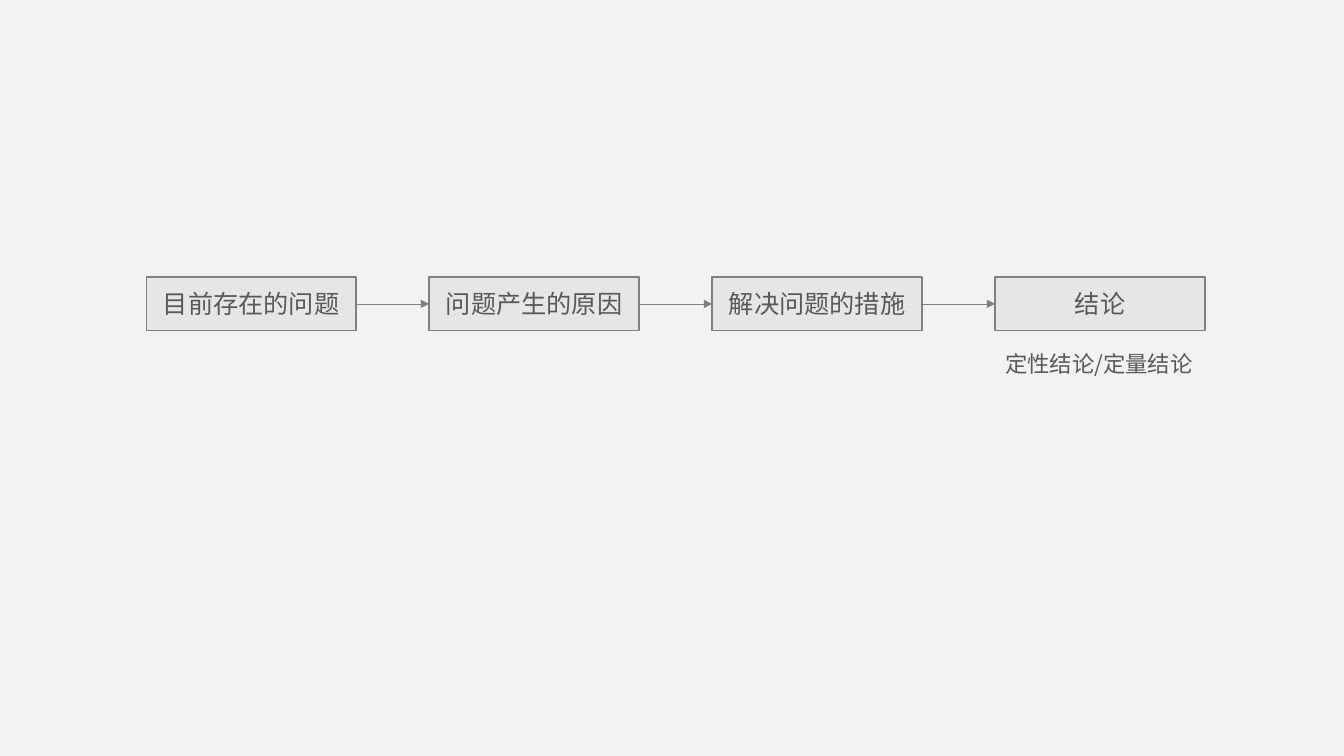
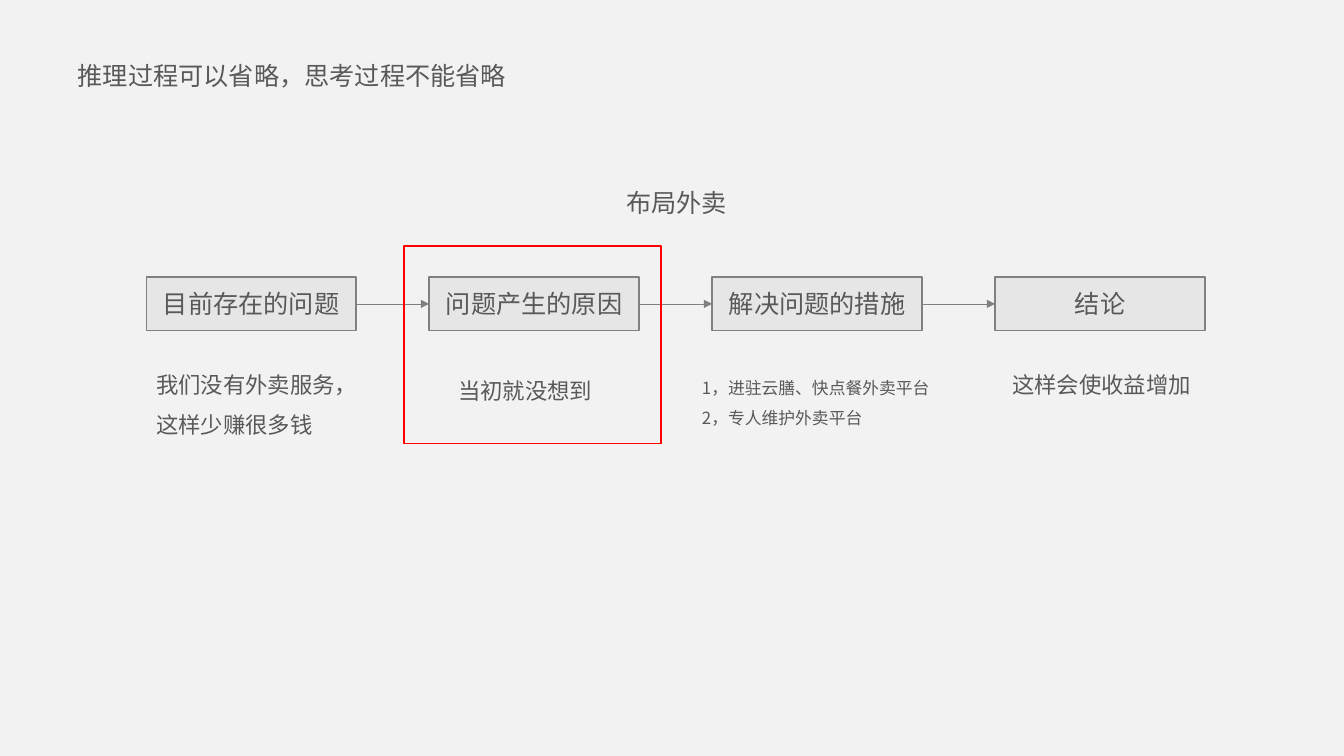
from lxml import etree
from pptx import Presentation
from pptx import util as u
from pptx.dml.color import RGBColor
from pptx.enum import shapes, text
from pptx.oxml import ns

FONT = "Noto Sans CJK SC"
PAPER = RGBColor(0xF2, 0xF2, 0xF2)
BOX_FILL = RGBColor(0xE7, 0xE6, 0xE6)
OUTLINE = RGBColor(0x80, 0x80, 0x80)
INK = RGBColor(0x59, 0x59, 0x59)
RED = RGBColor(0xFF, 0x00, 0x00)

STEPS = ["目前存在的问题", "问题产生的原因", "解决问题的措施", "结论"]
BOX_WIDTH, BOX_HEIGHT = u.Inches(2.08), u.Inches(0.53)
ROW_TOP = u.Inches(2.75)
FIRST, LAST = u.Inches(1.45), u.Inches(9.87)
COLUMNS = [FIRST + (LAST - FIRST) * i // (len(STEPS) - 1) for i in range(len(STEPS))]


def write(shape, lines, size, align=text.PP_ALIGN.LEFT, spacing=1.5):
    """Fill a shape with lines of text in the shared style."""
    frame = shape.text_frame
    frame.text = "\n".join(lines)
    frame.word_wrap = True
    for para in frame.paragraphs:
        para.alignment = align
        para.line_spacing = spacing
        para.space_before = u.Pt(0)
        for span in para.runs:
            span.font.name = FONT
            span.font.size = u.Pt(size)
            span.font.color.rgb = INK
            east_asian = etree.SubElement(span.font._element, ns.qn("a:ea"))
            east_asian.set("typeface", FONT)


def add_rectangle(page, left, top, width, height, line_color):
    box = page.shapes.add_shape(shapes.MSO_SHAPE.RECTANGLE, left, top, width, height)
    box.shadow.inherit = False
    box.fill.background()
    box.line.color.rgb = line_color
    box.line.width = u.Pt(1)
    return box


deck = Presentation()
deck.slide_width, deck.slide_height = u.Inches(13.33), u.Inches(7.5)
background = deck.slide_master.background.fill
background.solid()
background.fore_color.rgb = PAPER
title_only, blank = deck.slide_layouts[5], deck.slide_layouts[6]

overview = deck.slides.add_slide(blank)
example = deck.slides.add_slide(title_only)

# Title of the worked example
title = example.shapes.title
title.left, title.top = u.Inches(0.67), u.Inches(0.4)
title.width, title.height = u.Inches(4.75), u.Inches(0.56)
title.text_frame.vertical_anchor = text.MSO_ANCHOR.TOP
title.text_frame.auto_size = text.MSO_AUTO_SIZE.NONE
write(title, ["推理过程可以省略，思考过程不能省略"], 18)

# The chain of four steps stands on both slides
for page in (overview, example):
    boxes = []
    for left, step in zip(COLUMNS, STEPS):
        box = add_rectangle(page, left, ROW_TOP, BOX_WIDTH, BOX_HEIGHT, OUTLINE)
        box.fill.solid()
        box.fill.fore_color.rgb = BOX_FILL
        box.text_frame.vertical_anchor = text.MSO_ANCHOR.MIDDLE
        write(box, [step], 18, text.PP_ALIGN.CENTER, 1.0)
        boxes.append(box)
    for before, after in zip(boxes, boxes[1:]):
        arrow = page.shapes.add_connector(shapes.MSO_CONNECTOR.STRAIGHT, 0, 0, 0, 0)
        arrow.begin_connect(before, 3)
        arrow.end_connect(after, 1)
        arrow.line.color.rgb = OUTLINE
        arrow.line.width = u.Pt(0.5)
        head = etree.SubElement(arrow.line._get_or_add_ln(), ns.qn("a:tailEnd"))
        head.set("type", "triangle")
        etree.SubElement(arrow._element.spPr, ns.qn("a:effectLst"))

# Notes: slide, column, shift from the column, top, width, height, size, lines
NOTES = [
    (overview, 3, 0, 3.29, 2.25, 0.5, 16, ["定性结论/定量结论"]),
    (example, 0, 0, 3.5, 2.08, 0.91, 16, ["我们没有外卖服务，", "这样少赚很多钱"]),
    (example, 1, 0.19, 3.56, 1.71, 0.5, 16, ["当初就没想到"]),
    (example, 2, -0.2, 3.6, 2.48, 1.0, 12,
     ["1，进驻云膳、快点餐外卖平台", "2，专人维护外卖平台"]),
    (example, 3, 0.07, 3.5, 2.25, 0.5, 16, ["这样会使收益增加"]),
    (example, 2, -0.95, 1.66, 1.66, 0.56, 18, ["布局外卖"]),
]
for page, column, shift, top, width, height, size, lines in NOTES:
    note = page.shapes.add_textbox(COLUMNS[column] + u.Inches(shift), u.Inches(top),
                                   u.Inches(width), u.Inches(height))
    note.text_frame.auto_size = text.MSO_AUTO_SIZE.SHAPE_TO_FIT_TEXT
    write(note, lines, size)

# Red frame around the step that was missed
add_rectangle(example, COLUMNS[1] - u.Inches(0.25), u.Inches(2.44),
              u.Inches(2.55), u.Inches(1.96), RED)

deck.save("out.pptx")
